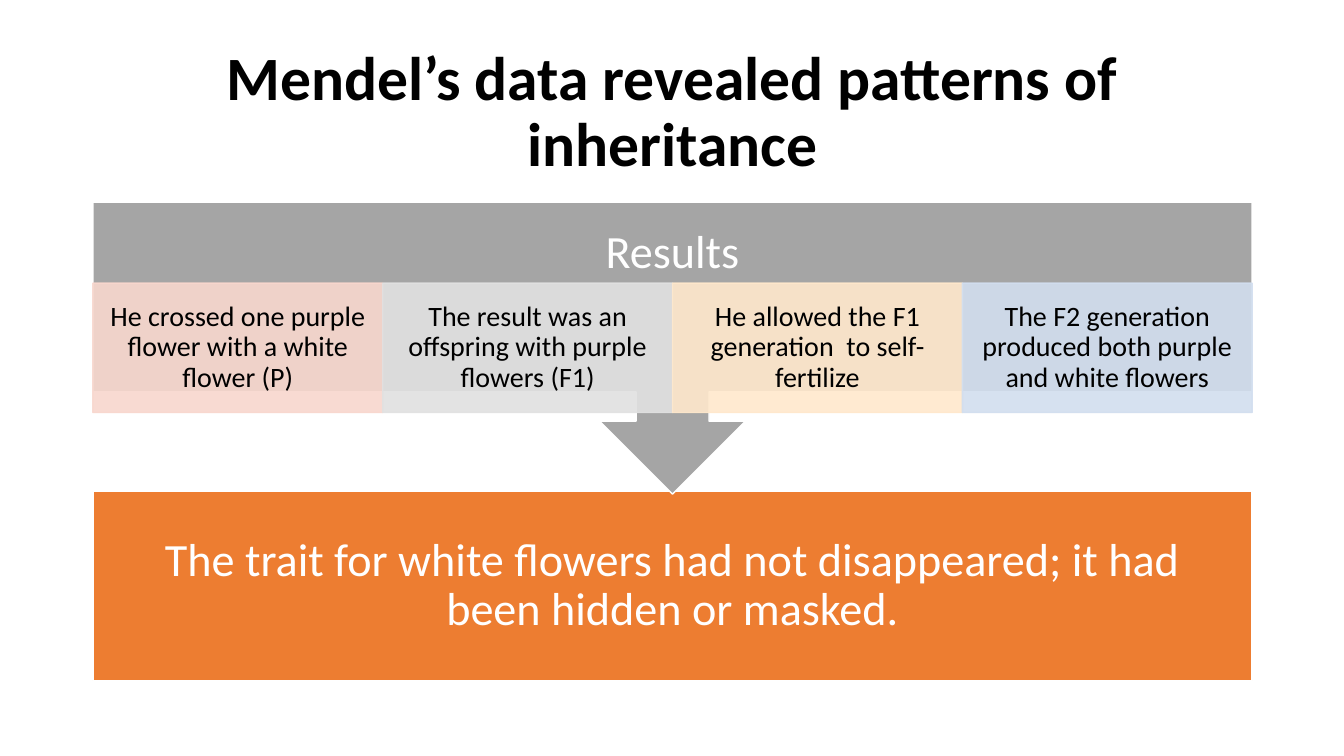
from dataclasses import dataclass

from lxml.etree import SubElement
from pptx import Presentation
from pptx.dml.color import RGBColor
from pptx.enum.shapes import MSO_SHAPE as Preset
from pptx.enum.text import MSO_ANCHOR as Anchor, PP_ALIGN as Align
from pptx.oxml.ns import qn
from pptx.shapes.autoshape import Shape
from pptx.slide import Slide
from pptx.util import Pt


@dataclass(frozen=True)
class Theme:
    font: str = "Calibri"
    title_size: float = 44
    heading_size: float = 33
    step_size: float = 20
    dark: str = "000000"
    light: str = "FFFFFF"
    callout: str = "A5A5A5"
    conclusion: str = "ED7D31"
    step_opacity: int = 90


@dataclass(frozen=True)
class Area:
    left: float
    top: float
    width: float
    height: float

    def lengths(self) -> tuple[Pt, Pt, Pt, Pt]:
        return Pt(self.left), Pt(self.top), Pt(self.width), Pt(self.height)


@dataclass(frozen=True)
class TextStyle:
    size: float
    color: str
    side_inset: float
    end_inset: float
    bold: bool = False


@dataclass(frozen=True)
class Step:
    text: str
    color: str


THEME = Theme()
TITLE_STYLE = TextStyle(THEME.title_size, THEME.dark, 7.2, 3.6, bold=True)
HEADING_STYLE = TextStyle(THEME.heading_size, THEME.light, 18.5, 18.5)
STEP_STYLE = TextStyle(THEME.step_size, THEME.dark, 11.5, 2)

LEFT, WIDTH = 66.4, 828
TITLE = Area(LEFT, 28.8, WIDTH, 104.4)
CALLOUT = Area(LEFT, 144.4, WIDTH, 208.5)
HEADING = Area(LEFT, 144.4, WIDTH, 73.2)
STEP_BAND = Area(LEFT, 202.3, WIDTH, 92.4)
CONCLUSION = Area(LEFT, 351, WIDTH, 135.2)

STEPS = [
    Step("He crossed one purple flower with a white flower (P)", "F8D7CE"),
    Step("The result was an offspring with purple flowers (F1)", "E1E1E1"),
    Step("He allowed the F1 generation  to self-fertilize", "FFE8CC"),
    Step("The F2 generation produced both purple and white flowers", "D2DEEF"),
]


def write(box: Shape, text: str, style: TextStyle) -> None:
    frame = box.text_frame
    frame.word_wrap = True
    frame.vertical_anchor = Anchor.MIDDLE
    frame.margin_left = frame.margin_right = Pt(style.side_inset)
    frame.margin_top = frame.margin_bottom = Pt(style.end_inset)
    para = frame.paragraphs[0]
    para.alignment = Align.CENTER
    para.line_spacing = 0.9
    span = para.add_run()
    span.text = text
    span.font.name = THEME.font
    span.font.size = Pt(style.size)
    span.font.bold = style.bold
    span.font.color.rgb = RGBColor.from_string(style.color)


def add_text(page: Slide, area: Area, text: str, style: TextStyle) -> None:
    write(page.shapes.add_textbox(*area.lengths()), text, style)


def add_block(page: Slide, preset: Preset, area: Area, fill: str, line: str) -> Shape:
    block = page.shapes.add_shape(preset, *area.lengths())
    block.shadow.inherit = False
    block.fill.solid()
    block.fill.fore_color.rgb = RGBColor.from_string(fill)
    block.line.color.rgb = RGBColor.from_string(line)
    block.line.width = Pt(1)
    return block


def set_opacity(block: Shape, percent: int) -> None:
    """Apply the same opacity to the fill and the outline."""
    for color in block._element.spPr.iter(qn("a:srgbClr")):
        SubElement(color, qn("a:alpha"), val=str(percent * 1000))


def add_steps(page: Slide) -> None:
    width = STEP_BAND.width / len(STEPS)
    for column, step in enumerate(STEPS):
        area = Area(LEFT + column * width, STEP_BAND.top, width, STEP_BAND.height)
        block = add_block(page, Preset.RECTANGLE, area, step.color, step.color)
        set_opacity(block, THEME.step_opacity)
        write(block, step.text, STEP_STYLE)


def main() -> None:
    deck = Presentation()
    deck.slide_width, deck.slide_height = Pt(960), Pt(540)
    page = deck.slides.add_slide(deck.slide_layouts[6])

    add_text(page, TITLE, "Mendel’s data revealed patterns of inheritance", TITLE_STYLE)
    conclusion = add_block(page, Preset.RECTANGLE, CONCLUSION, THEME.conclusion, THEME.light)
    write(
        conclusion,
        "The trait for white flowers had not disappeared; it had been hidden or masked.",
        HEADING_STYLE,
    )
    callout = add_block(page, Preset.UP_ARROW_CALLOUT, CALLOUT, THEME.callout, THEME.light)
    callout.rotation = 180
    add_text(page, HEADING, "Results", HEADING_STYLE)
    add_steps(page)

    deck.save("out.pptx")


if __name__ == "__main__":
    main()
